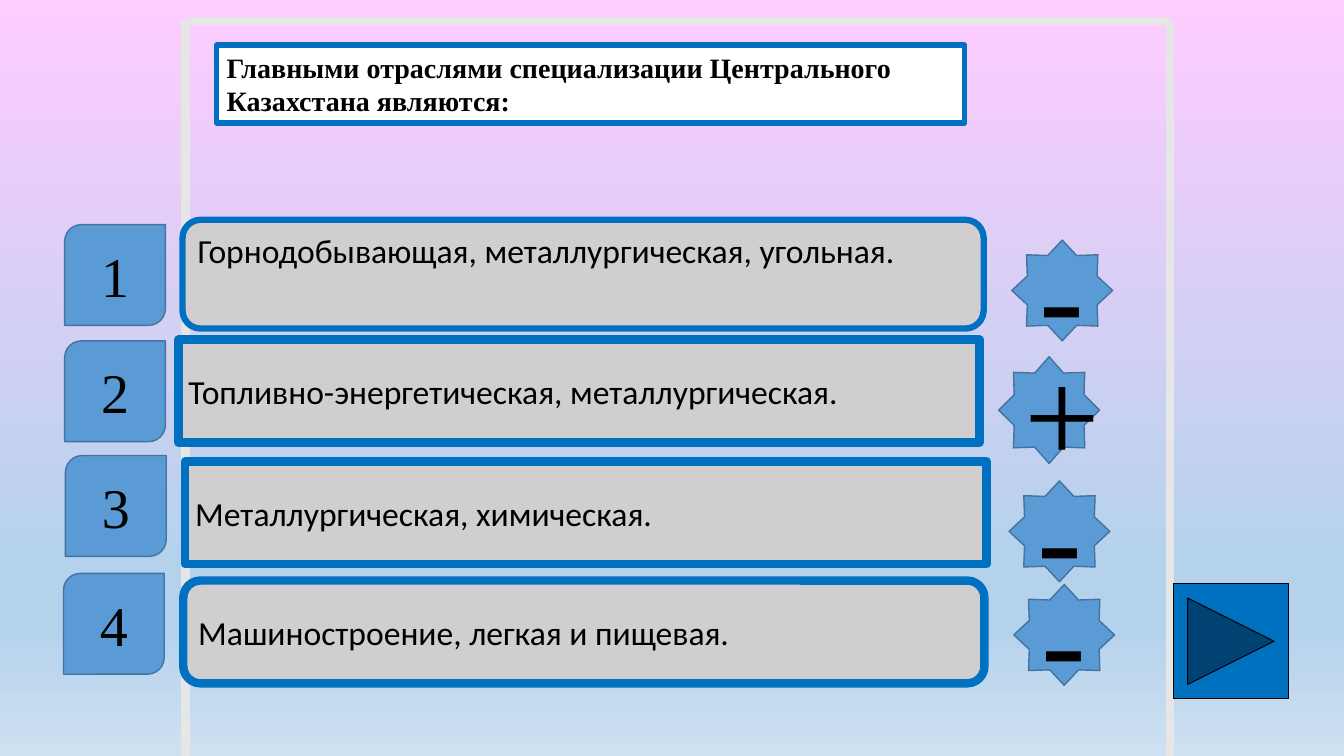
import pptx
import pptx.dml.color
import pptx.enum.shapes
import pptx.enum.text
import pptx.oxml.ns
import pptx.util
from lxml import etree
from pptx.util import Cm

COLORS = {
    "frame": "E7E6E6",
    "panel": "D0CECE",
    "accent": "0070C0",
    "marker": "5B9BD5",
    "marker_line": "43739E",
    "text": "000000",
    "white": "FFFFFF",
}
BACKGROUND_STOPS = [(0, "FFCCFF"), (74, "B5D2EC"), (83, "B5D2EC"), (100, "CEE1F2")]
SHAPES = pptx.enum.shapes.MSO_SHAPE
ALIGN = pptx.enum.text.PP_ALIGN
ANCHOR = pptx.enum.text.MSO_ANCHOR
SERIF = "Times New Roman"
SANS = "Calibri"


def color(name):
    return pptx.dml.color.RGBColor.from_string(COLORS[name])


def paint(shape, fill, line, width):
    shape.fill.solid()
    shape.fill.fore_color.rgb = color(fill)
    shape.line.color.rgb = color(line)
    shape.line.width = pptx.util.Pt(width)


def write(shape, text, font, size, align=ALIGN.LEFT, anchor=ANCHOR.MIDDLE, bold=False):
    frame = shape.text_frame
    frame.word_wrap = True
    frame.vertical_anchor = anchor
    paragraph = frame.paragraphs[0]
    paragraph.alignment = align
    run = paragraph.add_run()
    run.text = text
    run.font.name = font
    run.font.size = pptx.util.Pt(size)
    run.font.bold = bold
    run.font.color.rgb = color("text")


def add_box(slide, kind, box, fill, line, width):
    shape = slide.shapes.add_shape(kind, *map(Cm, box))
    shape.shadow.inherit = False
    paint(shape, fill, line, width)
    return shape


def add_frame_line(slide, *ends):
    line = slide.shapes.add_connector(
        pptx.enum.shapes.MSO_CONNECTOR.STRAIGHT, *map(Cm, ends))
    line.line.color.rgb = color("frame")
    line.line.width = pptx.util.Pt(6)
    etree.SubElement(line._element.spPr, pptx.oxml.ns.qn("a:effectLst"))


def add_option(slide, text, box, corner, width, anchor):
    shape = add_box(slide, SHAPES.ROUNDED_RECTANGLE, box, "panel", "accent", width)
    shape.adjustments[0] = corner
    write(shape, text, SANS, 24, anchor=anchor)


def add_marker(slide, kind, text, box, size):
    shape = add_box(slide, kind, box, "marker", "marker_line", 1)
    write(shape, text, SERIF, size, ALIGN.CENTER)


def set_background(slide):
    fill = slide.background.fill
    fill.gradient()
    fill.gradient_angle = 270
    qn = pptx.oxml.ns.qn
    stops = next(slide._element.iter(qn("a:gsLst")))
    for stop in list(stops):
        stops.remove(stop)
    for position, value in BACKGROUND_STOPS:
        stop = etree.SubElement(stops, qn("a:gs"), pos=str(position * 1000))
        etree.SubElement(stop, qn("a:srgbClr"), val=value)


def set_title(slide, text):
    title = slide.shapes.title
    title.left, title.top, title.width, title.height = map(Cm, (5.46, 1.14, 18.85, 1.96))
    paint(title, "white", "accent", 4)
    write(title, text, SERIF, 20, anchor=ANCHOR.TOP, bold=True)
    title.text_frame.auto_size = pptx.enum.text.MSO_AUTO_SIZE.NONE


def main():
    presentation = pptx.Presentation()
    presentation.slide_width = Cm(33.87)
    presentation.slide_height = Cm(19.05)
    slide = presentation.slides.add_slide(presentation.slide_layouts[5])
    set_background(slide)

    left, top, right, bottom = 4.67, 0.53, 29.49, 19.05
    add_frame_line(slide, left, top, right, top)
    for x in (left, right):
        add_frame_line(slide, x, top, x, bottom)

    set_title(slide, "Главными отраслями специализации Центрального Казахстана являются:")

    options = [
        ("Горнодобывающая, металлургическая, угольная.",
         (4.6, 5.54, 20.19, 2.74), 0.167, 4.5, ANCHOR.TOP),
        ("Топливно-энергетическая, металлургическая.",
         (4.5, 8.56, 20.19, 2.59), 0, 6, ANCHOR.MIDDLE),
        ("Металлургическая, химическая.",
         (4.67, 11.63, 20.19, 2.59), 0, 6, ANCHOR.MIDDLE),
        ("Машиностроение, легкая и пищевая.",
         (4.62, 14.63, 20.19, 2.59), 0.167, 6, ANCHOR.MIDDLE),
    ]
    for option in options:
        add_option(slide, *option)

    add_box(slide, SHAPES.ACTION_BUTTON_FORWARD_OR_NEXT,
            (29.57, 14.71, 2.9, 2.9), "accent", "text", 0.75)

    number_places = [(1.63, 5.66), (1.63, 8.59), (1.65, 11.48), (1.6, 14.45)]
    for number, place in enumerate(number_places, 1):
        add_marker(slide, SHAPES.ROUND_2_DIAG_RECTANGLE, str(number),
                   (*place, 2.54, 2.54), 40)

    signs = [
        ("-", (25.5, 6.05, 2.54, 2.54)),
        ("+", (25.17, 8.99, 2.54, 2.69)),
        ("-", (25.43, 12.12, 2.54, 2.54)),
        ("-", (25.55, 14.73, 2.54, 2.54)),
    ]
    for sign, box in signs:
        add_marker(slide, SHAPES.STAR_8_POINT, sign, box, 96)

    presentation.save("out.pptx")


if __name__ == "__main__":
    main()
